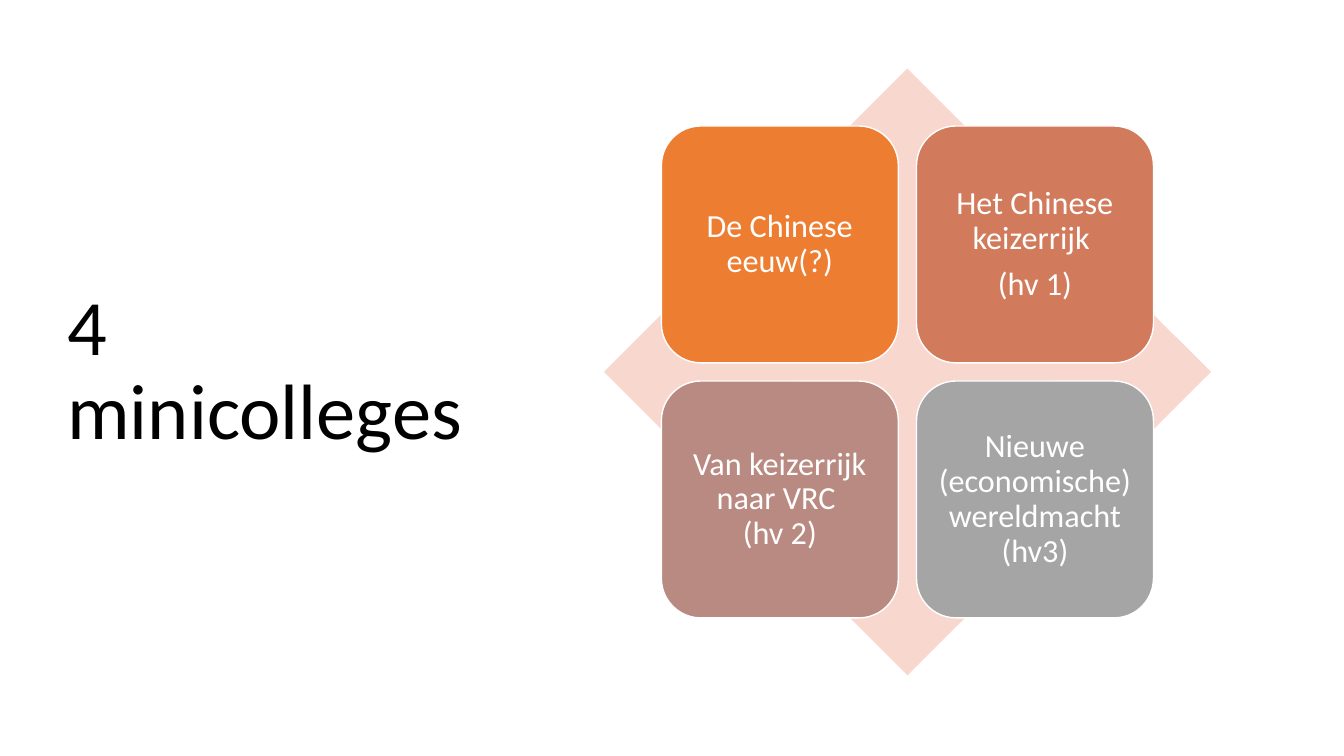
import pptx
import pptx.dml.color
import pptx.enum.shapes
import pptx.enum.text
import pptx.util

Inches, Pt = pptx.util.Inches, pptx.util.Pt
RGB = pptx.dml.color.RGBColor
SHAPE = pptx.enum.shapes.MSO_SHAPE
ALIGN = pptx.enum.text.PP_ALIGN

BLACK = RGB(0x00, 0x00, 0x00)
WHITE = RGB(0xFF, 0xFF, 0xFF)
PINK = RGB(0xF8, 0xD7, 0xCE)
ORANGE = RGB(0xED, 0x7D, 0x31)
RUST = RGB(0xD1, 0x7B, 0x5C)
MAUVE = RGB(0xB9, 0x8A, 0x82)
GREY = RGB(0xA5, 0xA5, 0xA5)

WIDE, HIGH = 13.33, 7.5
TOP, SIDE = 0.68, 6.02      # shared top edge and height of title and diamond
LEFT = 5.99                 # left edge of the diamond
TILE, STEP = 2.35, 2.53     # tile size and distance between tile origins
EDGE = (SIDE - STEP - TILE) / 2   # centres the tile grid in the diamond

TILES = [
    (["De Chinese eeuw(?)"], ORANGE),
    (["Het Chinese keizerrijk ", "(hv 1)"], RUST),
    (["Van keizerrijk naar VRC \v(hv 2)"], MAUVE),
    (["Nieuwe (economische) wereldmacht (hv3)"], GREY),
]


def write(frame, lines, size, color, align=ALIGN.LEFT, inset=(0.1, 0.05), gap=0):
    """Fill a text frame with paragraphs, gap points apart."""
    frame.word_wrap = True
    frame.vertical_anchor = pptx.enum.text.MSO_ANCHOR.MIDDLE
    frame.margin_left = frame.margin_right = Inches(inset[0])
    frame.margin_top = frame.margin_bottom = Inches(inset[1])
    for i, line in enumerate(lines):
        para = frame.add_paragraph() if i else frame.paragraphs[0]
        para.text = line
        para.alignment = align
        para.line_spacing = 0.9
        para.space_before = Pt(gap if i else 0)
        for run in para.runs:
            run.font.name = "Calibri"
            run.font.size = Pt(size)
            run.font.color.rgb = color


def draw(slide, kind, x, y, size, fill, line=None):
    """Add a square preset shape."""
    shape = slide.shapes.add_shape(kind, *map(Inches, (x, y, size, size)))
    shape.shadow.inherit = False
    shape.fill.solid()
    shape.fill.fore_color.rgb = fill
    if line is None:
        shape.line.fill.background()
    else:
        shape.line.color.rgb = line
        shape.line.width = Pt(1)
    return shape


def main():
    deck = pptx.Presentation()
    deck.slide_width, deck.slide_height = Inches(WIDE), Inches(HIGH)
    slide = deck.slides.add_slide(deck.slide_layouts[6])

    # Title
    title = slide.shapes.add_textbox(*map(Inches, (0.57, TOP, 4.16, SIDE)))
    write(title.text_frame, ["4 minicolleges"], 56, BLACK)

    # Diamond behind the tiles
    draw(slide, SHAPE.DIAMOND, LEFT, TOP, SIDE, PINK)

    # Two by two grid of lectures
    for i, (lines, fill) in enumerate(TILES):
        row, col = divmod(i, 2)
        tile = draw(slide, SHAPE.ROUNDED_RECTANGLE, LEFT + EDGE + col * STEP,
                    TOP + EDGE + row * STEP, TILE, fill, WHITE)
        write(tile.text_frame, lines, 23, WHITE, align=ALIGN.CENTER,
              inset=(0.1, 0.1), gap=8)

    deck.save("out.pptx")


if __name__ == "__main__":
    main()
